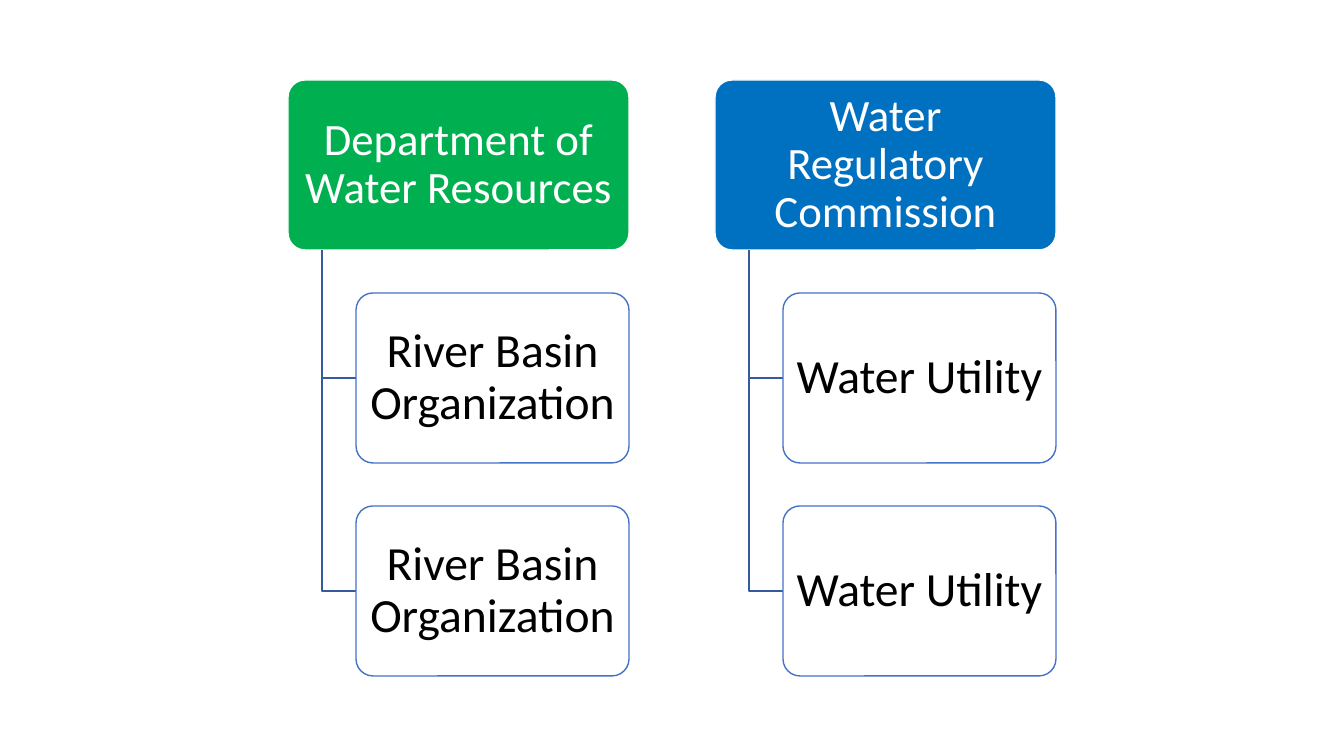
"""Draw two water agencies with the bodies that answer to each."""
import pptx
import pptx.dml.color
import pptx.enum.shapes
import pptx.enum.text
import pptx.oxml.ns
import pptx.util
from lxml import etree

RGB = pptx.dml.color.RGBColor
GREEN = RGB(0x00, 0xB0, 0x50)
BLUE = RGB(0x00, 0x70, 0xC0)
EDGE = RGB(0x44, 0x72, 0xC4)
LINK = RGB(0x36, 0x5B, 0x9D)
WHITE = RGB(0xFF, 0xFF, 0xFF)
BLACK = RGB(0x00, 0x00, 0x00)

SCALE = 914400 / 100.8
TOP, HIGH, STEP = 80, 170, 213
WIDE, STEM, INDENT = 341, 34, 68
TREES = [
    (288, GREEN, "Department of Water Resources", "River Basin Organization"),
    (715, BLUE, "Water Regulatory Commission", "Water Utility"),
]


def px(count):
    """Turn pixels into EMU."""
    return pptx.util.Emu(round(count * SCALE))


def add_box(slide, left, top, wide, text, size, fill, edge, ink):
    """Add a rounded box with centred text."""
    box = slide.shapes.add_shape(
        pptx.enum.shapes.MSO_SHAPE.ROUNDED_RECTANGLE,
        px(left), px(top), px(wide), px(HIGH))
    box.adjustments[0] = 0.1
    box.shadow.inherit = False
    box.fill.solid()
    box.fill.fore_color.rgb = fill
    box.line.color.rgb = edge
    box.line.width = pptx.util.Pt(1)
    frame = box.text_frame
    frame.word_wrap = True
    frame.vertical_anchor = pptx.enum.text.MSO_ANCHOR.MIDDLE
    frame.margin_left = frame.margin_right = px(7)
    frame.margin_top = frame.margin_bottom = px(4)
    para = frame.paragraphs[0]
    para.text = text
    para.alignment = pptx.enum.text.PP_ALIGN.CENTER
    para.line_spacing = 0.9
    para.font.name = "Calibri"
    para.font.size = pptx.util.Pt(size)
    para.font.color.rgb = ink
    return box


def fade(box, share):
    """Set the opacity of a box's fill in percent."""
    color = box.element.spPr.xpath("a:solidFill/a:srgbClr")[0]
    alpha = etree.SubElement(color, pptx.oxml.ns.qn("a:alpha"))
    alpha.set("val", str(share * 1000))


def add_link(slide, left, top, end):
    """Add an elbow line from a head box down to a child box."""
    path = slide.shapes.build_freeform(left, top, SCALE)
    path.add_line_segments(
        [(left, end), (left + INDENT - STEM, end)], close=False)
    link = path.convert_to_shape()
    link.shadow.inherit = False
    link.fill.background()
    link.line.color.rgb = LINK
    link.line.width = pptx.util.Pt(1)


def add_tree(slide, left, fill, head, child):
    """Add a head box and its two linked child boxes."""
    add_box(slide, left, TOP, WIDE, head, 32, fill, WHITE, WHITE)
    for row in (1, 2):
        top = TOP + row * STEP
        add_link(slide, left + STEM, TOP + HIGH, top + HIGH // 2)
        box = add_box(slide, left + INDENT, top, WIDE - INDENT,
                      child, 34, WHITE, EDGE, BLACK)
        fade(box, 90)


def main():
    """Build and save the slide."""
    deck = pptx.Presentation()
    deck.slide_width, deck.slide_height = px(1344), px(756)
    slide = deck.slides.add_slide(deck.slide_layouts[6])
    for tree in TREES:
        add_tree(slide, *tree)
    deck.save("out.pptx")


if __name__ == "__main__":
    main()
